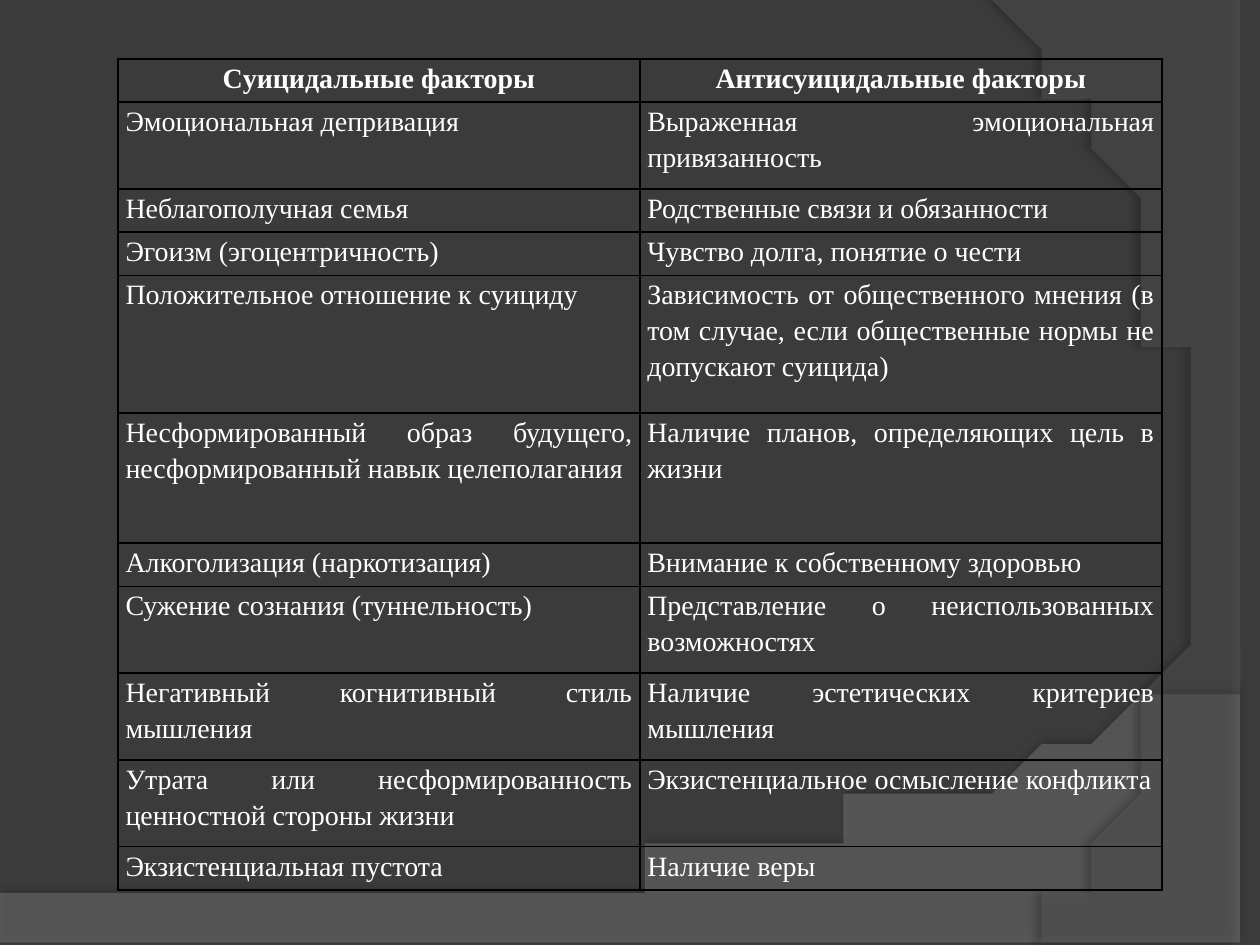
"""Build a slide with a two-column table of factors over a curved backdrop."""
from dataclasses import dataclass

from lxml import etree
from pptx import Presentation
from pptx import util as u
from pptx.dml import color
from pptx.enum import text
from pptx.oxml import ns

HUES = {"back": "3B3B3B", "wave": "7F7F7F", "arc": "5E5E5E",
        "ink": "FFFFFF", "rule": "000000"}
FONT = {"name": "Times New Roman", "size": u.Pt(16)}
CELL = {"margin_left": u.Cm(0.15), "margin_right": u.Cm(0.15),
        "margin_top": 0, "margin_bottom": 0}
SIZE = {"slide_width": u.Cm(25.4), "slide_height": u.Cm(19.05)}
PLAIN = {"first_row": False, "horz_banding": False}


@dataclass
class Sweep:
    """A filled outline: straight corners, then one curve from the last corner."""
    hue: str
    alpha: int
    corners: list
    curve: list
    shade: int
    dist: float
    angle: int


@dataclass
class Row:
    """A table row with its height in centimetres."""
    left: str
    right: str
    high: float = 0.87


SWEEPS = [
    Sweep("wave", 45, [(0, 17.91), (0, 19.08), (25.4, 19.08), (25.4, 13.21)],
          [(14.2, 18.52), (9.93, 18.26), (0, 17.91)], 35, 3.5, 270),
    Sweep("arc", 40, [(25.4, 0.05), (25.4, 19.05), (20.85, 19.05)],
          [(23.75, 15.72), (25.86, 7.62), (20.32, 0)], 45, 4, 180),
]
ROWS = [
    Row("Cуицидальные факторы", "Антисуицидальные факторы"),
    Row("Эмоциональная депривация", "Выраженная эмоциональная привязанность", 1.75),
    Row("Неблагополучная семья", "Родственные связи и обязанности"),
    Row("Эгоизм (эгоцентричность)", "Чувство долга, понятие о чести"),
    Row("Положительное отношение к суициду",
        "Зависимость от общественного мнения (в том случае, если "
        "общественные нормы не допускают суицида)", 2.78),
    Row("Несформированный образ будущего, несформированный навык целеполагания",
        "Наличие планов, определяющих цель в жизни", 2.62),
    Row("Алкоголизация (наркотизация)", "Внимание к собственному здоровью"),
    Row("Сужение сознания (туннельность)",
        "Представление о неиспользованных возможностях", 1.75),
    Row("Негативный когнитивный стиль мышления",
        "Наличие эстетических критериев мышления", 1.75),
    Row("Утрата или несформированность ценностной стороны жизни",
        "Экзистенциальное осмысление конфликта", 1.75),
    Row("Экзистенциальная пустота", "Наличие веры"),
]


def apply(item, values: dict) -> None:
    """Set each named value on the item."""
    for name, value in values.items():
        setattr(item, name, value)


def tint(fill, hue: str) -> None:
    """Give a fill a solid colour."""
    fill.solid()
    fill.fore_color.rgb = color.RGBColor.from_string(HUES[hue])


def add(parent, tag: str, **attrs):
    """Append a drawing element with its attributes."""
    return etree.SubElement(parent, ns.qn(f"a:{tag}"),
                            {key: str(value) for key, value in attrs.items()})


def trace(start: tuple, curve: list, steps: int = 40) -> list:
    """Return points along a cubic curve."""
    points = []
    for step in range(1, steps + 1):
        t = step / steps
        parts = ((1 - t) ** 3, 3 * t * (1 - t) ** 2, 3 * t * t * (1 - t), t ** 3)
        points.append(tuple(sum(part * spot[axis] for part, spot
                                in zip(parts, [start, *curve])) for axis in (0, 1)))
    return points


def draw_sweep(slide, sweep: Sweep) -> None:
    """Draw a translucent outline with a soft shadow."""
    first, *rest = sweep.corners
    pen = slide.shapes.build_freeform(*first, scale=u.Cm(1))
    pen.add_line_segments(rest + trace(rest[-1], sweep.curve), close=True)
    shape = pen.convert_to_shape()
    tint(shape.fill, sweep.hue)
    shape.line.fill.background()
    shape.shadow.inherit = False
    props = shape.element.spPr
    add(props.find(".//" + ns.qn("a:srgbClr")), "alpha", val=sweep.alpha * 1000)
    glow = add(props.find(ns.qn("a:effectLst")), "outerShdw", blurRad=u.Pt(4),
               dist=u.Pt(sweep.dist), dir=sweep.angle * 60000, rotWithShape=0)
    add(add(glow, "srgbClr", val=HUES["rule"]), "alpha", val=sweep.shade * 1000)


def frame(cell) -> None:
    """Rule all four sides of a cell and leave it clear."""
    props = cell._tc.get_or_add_tcPr()
    for side in ("lnL", "lnR", "lnT", "lnB"):
        line = add(props, side, w=u.Pt(1))
        add(add(line, "solidFill"), "srgbClr", val=HUES["rule"])
    cell.fill.background()


def write(cell, words: str, align, bold: bool) -> None:
    """Fill a cell with one paragraph."""
    apply(cell, CELL)
    para = cell.text_frame.paragraphs[0]
    apply(para, {"alignment": align, "line_spacing": 1.15})
    run = para.add_run()
    run.text = words
    apply(run.font, {**FONT, "bold": bold})
    tint(run.font.fill, "ink")


def draw_table(slide, rows: list) -> None:
    """Draw the table of factors."""
    high = sum(row.high for row in rows)
    table = slide.shapes.add_table(len(rows), 2, u.Cm(2.38), u.Cm(1.19),
                                   u.Cm(21.04), u.Cm(high)).table
    apply(table, PLAIN)
    modes = text.PP_ALIGN
    for at, row in enumerate(rows):
        table.rows[at].height = u.Cm(row.high)
        for col, words in enumerate((row.left, row.right)):
            cell = table.cell(at, col)
            align = modes.CENTER if at == 0 else modes.JUSTIFY
            if (at, col) == (len(rows) - 1, 1):
                align = modes.LEFT
            write(cell, words, align, at == 0)
            frame(cell)


def main() -> None:
    """Build and save the slide."""
    deck = Presentation()
    apply(deck, SIZE)
    slide = deck.slides.add_slide(deck.slide_layouts[6])
    tint(slide.background.fill, "back")
    for sweep in SWEEPS:
        draw_sweep(slide, sweep)
    draw_table(slide, ROWS)
    deck.save("out.pptx")


if __name__ == "__main__":
    main()
